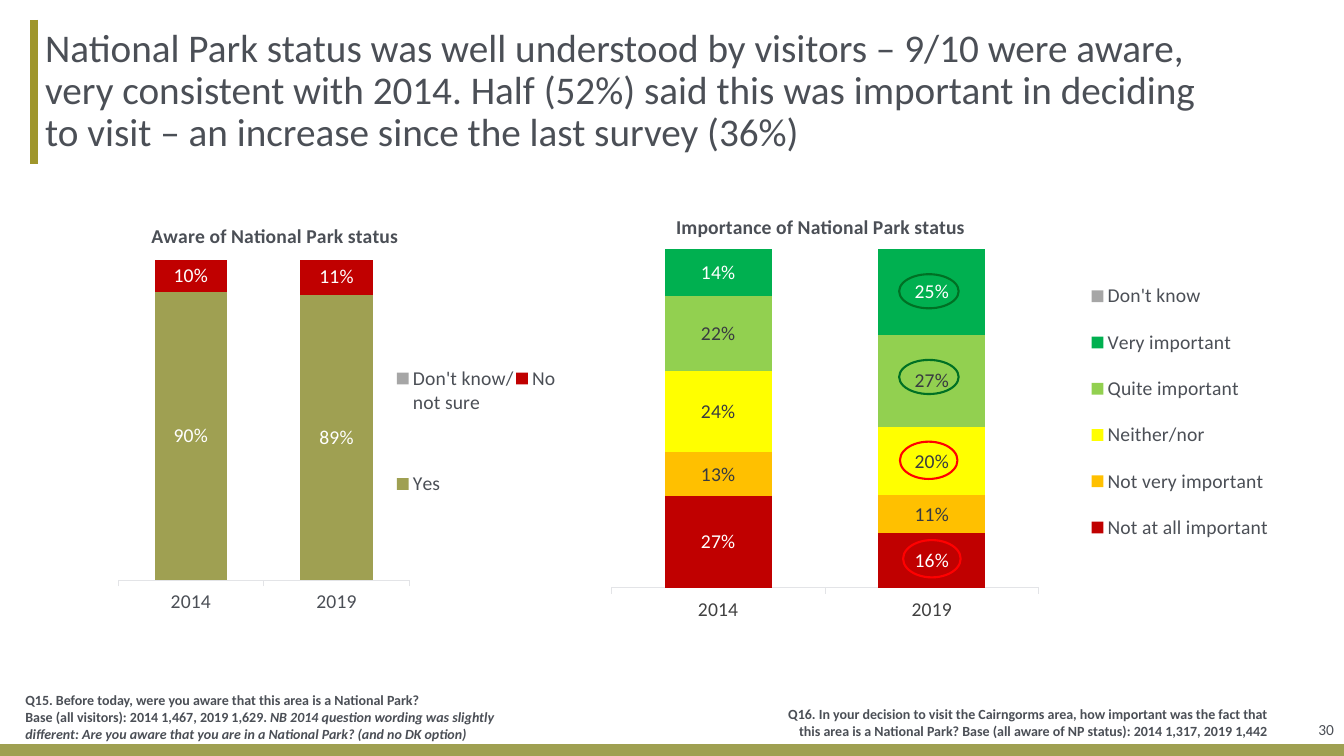
from lxml import etree
from pptx import Presentation
from pptx.chart.data import CategoryChartData
from pptx.dml.color import RGBColor
from pptx.enum.chart import XL_CHART_TYPE, XL_LEGEND_POSITION, XL_TICK_LABEL_POSITION, XL_TICK_MARK
from pptx.enum.shapes import MSO_CONNECTOR, MSO_SHAPE
from pptx.enum.text import MSO_ANCHOR, MSO_AUTO_SIZE, PP_ALIGN
from pptx.oxml.ns import qn
from pptx.util import Cm, Pt

STACKED = XL_CHART_TYPE.COLUMN_STACKED_100
LEGEND_RIGHT = XL_LEGEND_POSITION.RIGHT
LABELS_LOW = XL_TICK_LABEL_POSITION.LOW
TICK_OUT = XL_TICK_MARK.OUTSIDE
STRAIGHT = MSO_CONNECTOR.STRAIGHT
RECTANGLE, OVAL = MSO_SHAPE.RECTANGLE, MSO_SHAPE.OVAL
MIDDLE = MSO_ANCHOR.MIDDLE
NO_FIT = MSO_AUTO_SIZE.NONE
LEFT, RIGHT = PP_ALIGN.LEFT, PP_ALIGN.RIGHT

WIDTH, HEIGHT = 33.87, 19.05
INK, DARK, WHITE = "4B4F56", "383B40", "FFFFFF"
OLIVE, GOLD, PALE = "9FA052", "9F962B", "E3E4E7"
RED, GREY = "C00000", "A6A6A6"
RISE, FALL = "007024", "FF0000"


def color(hex_value):
    """Turn a hex string into a colour."""
    return RGBColor.from_string(hex_value)


def style_font(font, size, ink=INK, bold=False, italic=False):
    """Format a font in the slide's typeface."""
    font.name = "Calibri"
    font.size = Pt(size)
    font.bold = bold
    font.italic = italic
    font.color.rgb = color(ink)


def add_text(paragraph, text, **font_format):
    """Append a formatted run to a paragraph."""
    run = paragraph.add_run()
    run.text = text
    style_font(run.font, **font_format)


def set_layout(element, index, target=None, **fractions):
    """Give a chart part a manual layout in fractions of the chart."""
    for old_layout in element.findall(qn("c:layout")):
        element.remove(old_layout)
    layout = etree.Element(qn("c:layout"))
    manual = etree.SubElement(layout, qn("c:manualLayout"))
    if target:
        etree.SubElement(manual, qn("c:layoutTarget")).set("val", target)
    for axis in ("x", "y"):
        etree.SubElement(manual, qn(f"c:{axis}Mode")).set("val", "edge")
    for name, value in fractions.items():
        etree.SubElement(manual, qn(f"c:{name}")).set("val", str(value))
    element.insert(index, layout)


class SurveySlide:
    """Holds the current slide and draws its elements."""

    def __init__(self, presentation):
        """Add a slide with a title and two body placeholders."""
        self.slide = presentation.slides.add_slide(presentation.slide_layouts[3])
        self.shapes = self.slide.shapes

    def fill_frame(self, shape, box, paragraphs, align=LEFT, spacing=1.0, inset=0.2):
        """Place a text shape and write its paragraphs of (text, format) runs."""
        shape.left, shape.top, shape.width, shape.height = map(Cm, box)
        frame = shape.text_frame
        frame.word_wrap = True
        frame.auto_size = NO_FIT
        frame.vertical_anchor = MIDDLE
        frame.margin_left = Cm(inset)
        frame.margin_top = frame.margin_right = frame.margin_bottom = 0
        for number, runs in enumerate(paragraphs):
            paragraph = frame.add_paragraph() if number else frame.paragraphs[0]
            properties = paragraph._p.get_or_add_pPr()
            properties.set("marL", "0")
            properties.set("indent", "0")
            etree.SubElement(properties, qn("a:buNone"))
            paragraph.alignment = align
            paragraph.line_spacing = spacing
            paragraph.space_before = Pt(0)
            for text, font_format in runs:
                add_text(paragraph, text, **font_format)

    def placeholder(self, index, box, paragraphs, **frame_format):
        """Fill one of the template's placeholders."""
        self.fill_frame(self.slide.placeholders[index], box, paragraphs, **frame_format)

    def page_number(self, box, text):
        """Write the page number."""
        shape = self.shapes.add_textbox(*map(Cm, box))
        self.fill_frame(shape, box, [[(text, {"size": 11})]], align=RIGHT)
        shape.text_frame.margin_right = Cm(0.25)

    def shape(self, kind, box, fill=None, line=None):
        """Draw a preset shape with a fill or an outline."""
        shape = self.shapes.add_shape(kind, *map(Cm, box))
        shape.shadow.inherit = False
        if fill:
            shape.fill.solid()
            shape.fill.fore_color.rgb = color(fill)
        else:
            shape.fill.background()
        if line:
            shape.line.color.rgb = color(line)
            shape.line.width = Pt(1.5)
        else:
            shape.line.fill.background()

    def line(self, ends, ink, width):
        """Draw a straight line."""
        connector = self.shapes.add_connector(STRAIGHT, *map(Cm, ends))
        connector.line.color.rgb = color(ink)
        connector.line.width = Pt(width)
        etree.SubElement(connector._element.spPr, qn("a:effectLst"))

    def chart(self, box, title, series_rows, title_at, plot_at, legend_at, axis_ink=INK):
        """Draw a 100% stacked column chart of both survey years."""
        data = CategoryChartData(number_format="0%")
        data.categories = ["2014", "2019"]
        for name, values, _, _ in series_rows:
            data.add_series(name, values)
        chart = self.shapes.add_chart(STACKED, *map(Cm, box), data).chart
        style_font(chart.font, 14)
        chart.has_title = True
        add_text(chart.chart_title.text_frame.paragraphs[0], title, size=14, bold=True)
        chart.chart_title.include_in_layout = False
        chart.has_legend = True
        chart.legend.position = LEGEND_RIGHT
        chart.legend.include_in_layout = False
        style_font(chart.legend.font, 14)

        value_axis = chart.value_axis
        value_axis.minimum_scale = 0
        value_axis.has_major_gridlines = False
        value_axis.visible = False
        category_axis = chart.category_axis
        category_axis.major_tick_mark = TICK_OUT
        category_axis.tick_label_position = LABELS_LOW
        category_axis.format.line.color.rgb = color(PALE)
        category_axis.format.line.width = Pt(0.75)
        style_font(category_axis.tick_labels.font, 14, axis_ink)

        plot = chart.plots[0]
        plot.gap_width = 100
        plot.overlap = 100
        plot.vary_by_categories = False
        for series, (_, _, fill, label_ink) in zip(plot.series, series_rows):
            series.format.fill.solid()
            series.format.fill.fore_color.rgb = color(fill)
            if label_ink:
                labels = series.data_labels
                labels.show_value = True
                labels.number_format = "0%"
                labels.number_format_is_linked = False
                style_font(labels.font, 14, label_ink)

        parts = chart.element
        set_layout(parts.xpath("c:chart/c:title")[0], 1, **dict(zip("xy", title_at)))
        set_layout(parts.xpath(".//c:plotArea")[0], 0, "inner", **dict(zip("xywh", plot_at)))
        set_layout(parts.xpath(".//c:legend")[0], 1, **dict(zip("xywh", legend_at)))


def main():
    """Build and save the National Park status slide."""
    presentation = Presentation()
    presentation.slide_width, presentation.slide_height = Cm(WIDTH), Cm(HEIGHT)
    survey = SurveySlide(presentation)
    survey.shape(RECTANGLE, (0, 18.75, WIDTH, 0.3), fill=OLIVE)
    survey.line((0.86, 0.5, 0.86, 4.14), GOLD, 6)
    survey.page_number((31.55, 17.65, 2.32, 1.48), "30")

    note = {"size": 10, "bold": True}
    survey.placeholder(0, (0.94, 0.5, 29.6, 3.62), [[(
        "National Park status was well understood by visitors – 9/10 were aware, very consistent "
        "with 2014. Half (52%) said this was important in deciding to visit – an increase since "
        "the last survey (36%)", {"size": 28})]], spacing=0.9)
    survey.placeholder(1, (0.44, 17.32, 13.05, 1.48), [
        [("Q15. Before today, were you aware that this area is a National Park?", note)],
        [("Base (all visitors): 2014 1,467, 2019 1,629. ", note),
         ("NB 2014 question wording was slightly different: Are you aware that you are in a "
          "National Park? (and no DK option)", {**note, "italic": True})]])
    survey.placeholder(2, (19.15, 17.65, 12.78, 1.1), [[(
        "Q16. In your decision to visit the Cairngorms area, how important was the fact that this "
        "area is a National Park? Base (all aware of NP status): 2014 1,317, 2019 1,442",
        note)]], align=RIGHT)

    survey.chart((1.98, 4.72, 12.45, 11.38), "Aware of National Park status", [
        ("Yes", (0.9, 0.89), OLIVE, WHITE),
        ("No", (0.1, 0.11), RED, WHITE),
        ("Don't know/\nnot sure", (None, 0), GREY, None),
    ], (0.14, 0.07), (0.08, 0.16, 0.59, 0.71), (0.64, 0.27, 0.33, 0.54))
    survey.chart((13.87, 5.18, 19.23, 10.95), "Importance of National Park status", [
        ("Not at all important", (0.27, 0.16), RED, WHITE),
        ("Not very important", (0.13, 0.11), "FFC000", DARK),
        ("Neither/nor", (0.24, 0.2), "FFFF00", DARK),
        ("Quite important", (0.22, 0.27), "92D050", DARK),
        ("Very important", (0.14, 0.25), "00B050", WHITE),
        ("Don't know", (None, 0), GREY, None),
    ], (0.16, 0.01), (0.08, 0.1, 0.56, 0.78), (0.69, 0.13, 0.27, 0.69), axis_ink="404040")

    for left, top, width, height, ink in (
        (22.66, 6.91, 1.5, 0.86, RISE),
        (22.66, 9.07, 1.5, 0.86, RISE),
        (22.68, 11.13, 1.45, 0.94, FALL),
        (22.76, 13.61, 1.45, 0.94, FALL),
    ):
        survey.shape(OVAL, (left, top, width, height), line=ink)
    presentation.save("out.pptx")


if __name__ == "__main__":
    main()
